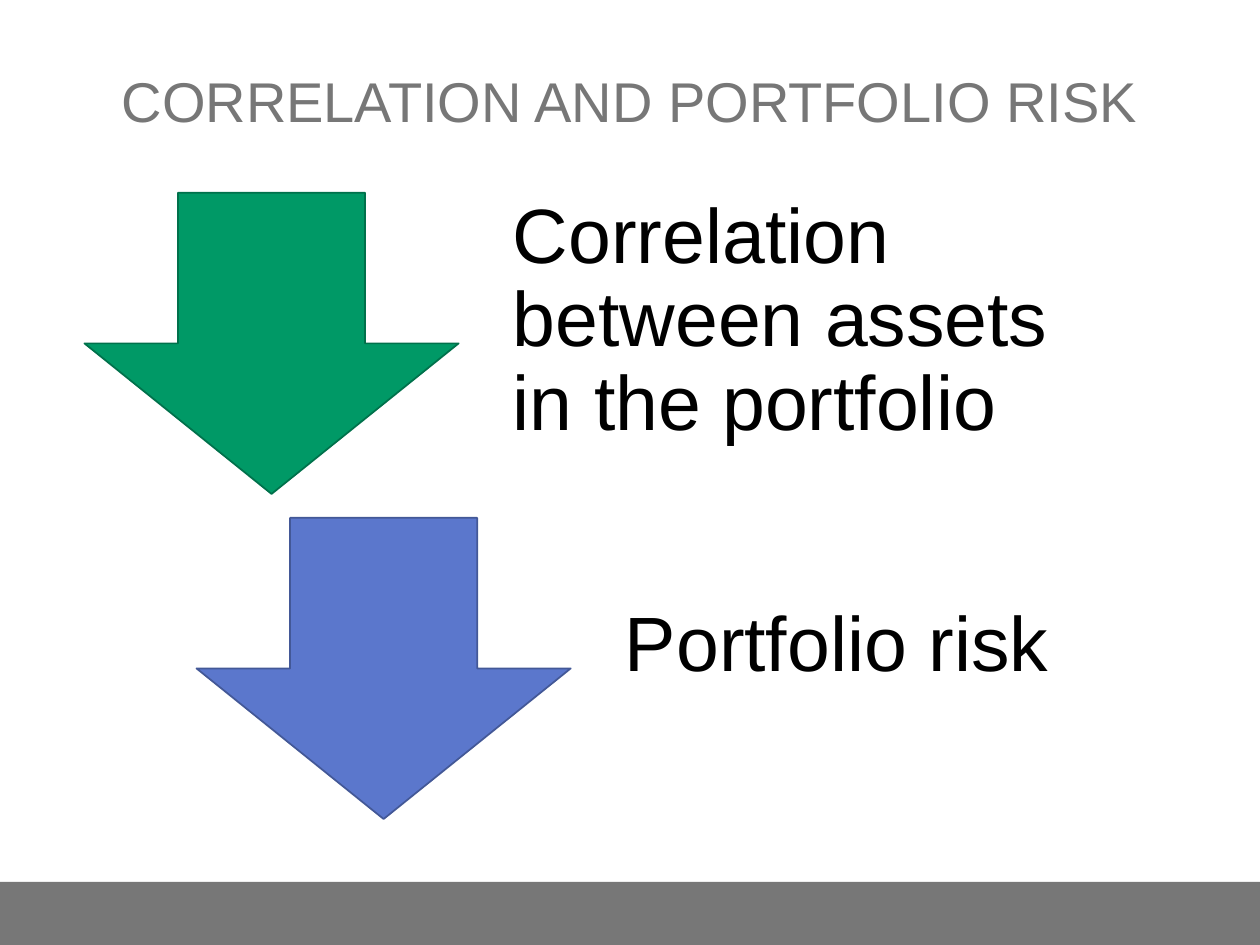
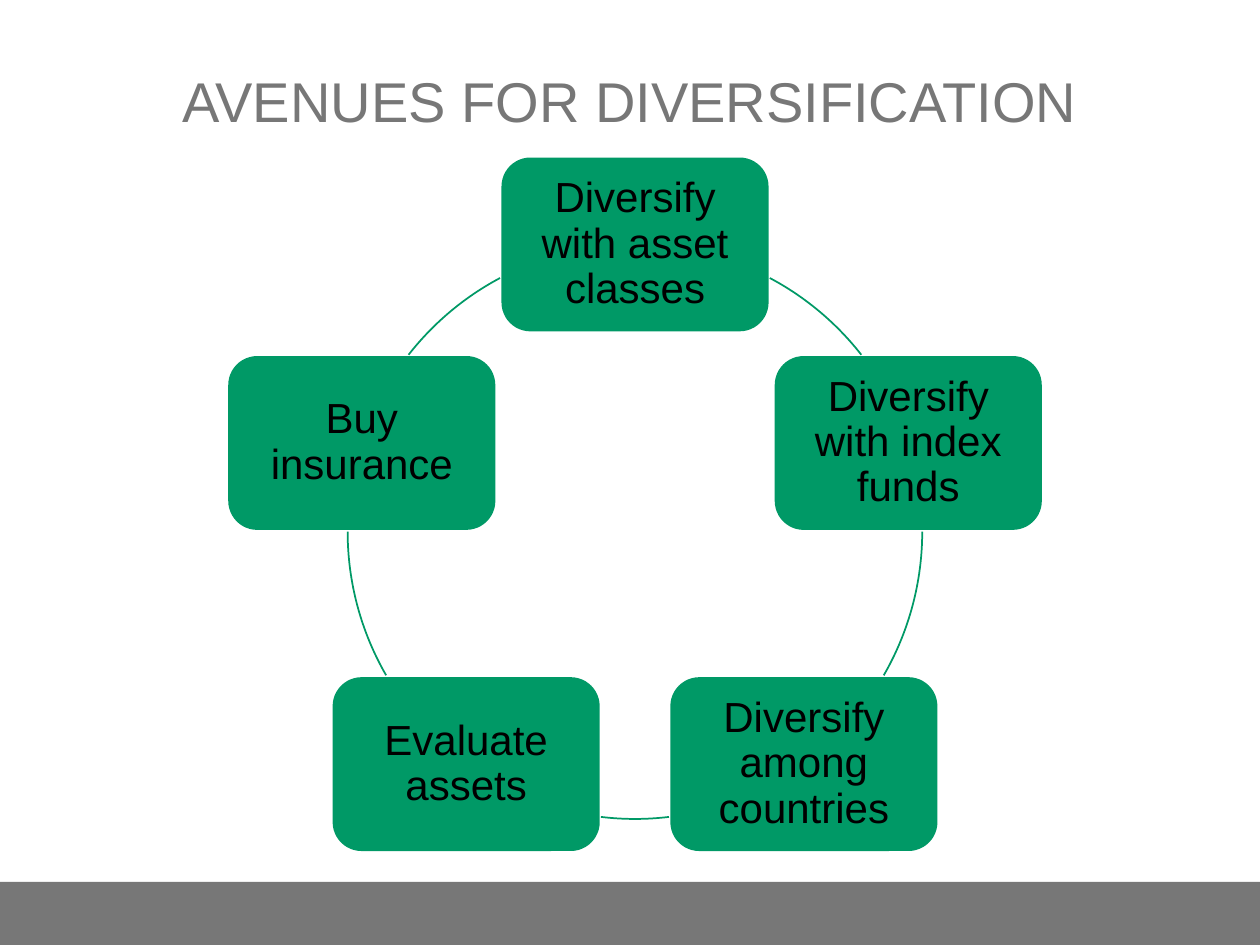
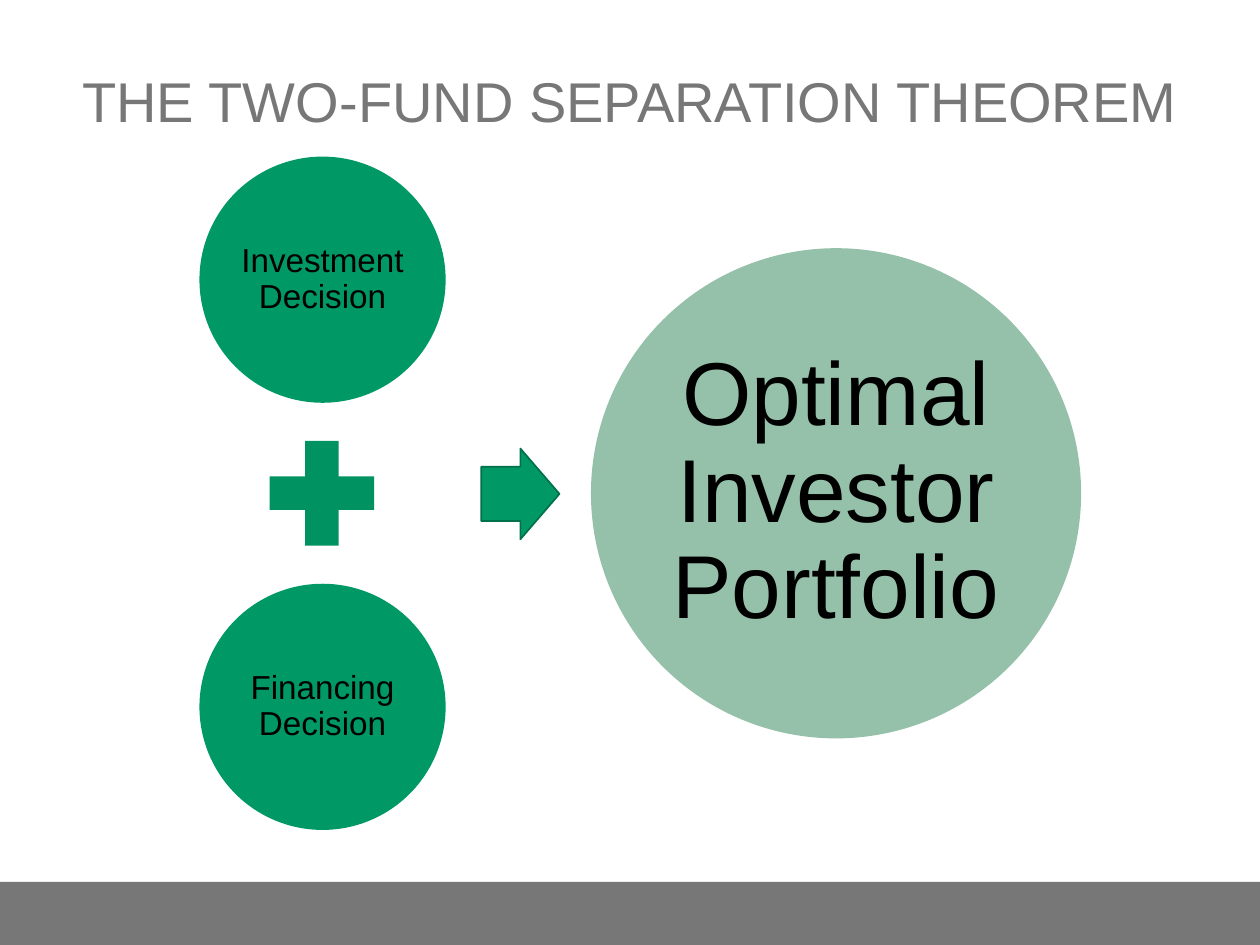
import math
from dataclasses import dataclass
from typing import Optional

import pptx
import pptx.dml.color
import pptx.enum.shapes
import pptx.enum.text
import pptx.presentation
import pptx.shapes.autoshape
import pptx.shapes.base
import pptx.slide
import pptx.util

Inches = pptx.util.Inches
Preset = pptx.enum.shapes.MSO_SHAPE
Align = pptx.enum.text.PP_ALIGN
Anchor = pptx.enum.text.MSO_ANCHOR

FONT = "Arial"
COLOURS = {
    "background": "FFFFFF",
    "grey": "777777",
    "text": "000000",
    "green": "009966",
    "dark green": "00714B",
    "plus green": "009261",
    "pale green": "95C0A9",
    "blue": "5B77CC",
    "dark blue": "435897",
}


@dataclass(frozen=True)
class Box:
    left: float
    top: float
    width: float
    height: float

    def lengths(self) -> tuple:
        return tuple(Inches(value) for value in (self.left, self.top, self.width, self.height))


@dataclass(frozen=True)
class Label:
    text: str
    size: float
    colour: str = "text"
    align: Align = Align.CENTER
    margins: tuple = (0.1, 0.1, 0.1, 0.1)
    line_spacing: float = 0.9


@dataclass(frozen=True)
class Figure:
    preset: Preset
    box: Box
    fill: Optional[str] = None
    line: Optional[str] = None
    label: Optional[Label] = None
    adjustments: tuple = ()
    rotation: float = 0


@dataclass(frozen=True)
class RiskStep:
    preset: Preset
    rotation: float
    fill: str
    line: str
    text: str


BAND = Figure(Preset.RECTANGLE, Box(0, 7, 10, 0.5), "grey")
TITLE_BOX = Box(0.42, 0.17, 9.16, 1.25)

RISK_STEPS = (
    RiskStep(Preset.UP_ARROW, 180, "green", "dark green",
             "Correlation between assets in the portfolio"),
    RiskStep(Preset.DOWN_ARROW, 0, "blue", "dark blue", "Portfolio risk"),
)
AVENUES = (
    "Diversify with asset classes",
    "Diversify with index funds",
    "Diversify among countries",
    "Evaluate assets",
    "Buy insurance",
)
ARC_ANGLES = ((298, 322), (0, 30), (83.2, 96.8), (150, 180), (218, 242))


def colour(name: str) -> pptx.dml.color.RGBColor:
    return pptx.dml.color.RGBColor.from_string(COLOURS[name])


def apply(target: object, values: dict) -> None:
    for name, value in values.items():
        setattr(target, name, value)


def write_label(shape: pptx.shapes.base.BaseShape, label: Label) -> None:
    frame = shape.text_frame
    sides = ("margin_left", "margin_top", "margin_right", "margin_bottom")
    margins = {side: Inches(value) for side, value in zip(sides, label.margins)}
    apply(frame, {"word_wrap": True, "vertical_anchor": Anchor.MIDDLE, **margins})
    paragraph = frame.paragraphs[0]
    apply(paragraph, {"alignment": label.align, "line_spacing": label.line_spacing})
    run = paragraph.add_run()
    run.text = label.text
    apply(run.font, {"name": FONT, "size": pptx.util.Pt(label.size)})
    run.font.color.rgb = colour(label.colour)


def add_text(slide: pptx.slide.Slide, box: Box, label: Label) -> None:
    write_label(slide.shapes.add_textbox(*box.lengths()), label)


def add_figure(slide: pptx.slide.Slide, figure: Figure) -> pptx.shapes.autoshape.Shape:
    shape = slide.shapes.add_shape(figure.preset, *figure.box.lengths())
    shape.shadow.inherit = False
    shape.rotation = figure.rotation
    for index, value in enumerate(figure.adjustments):
        shape.adjustments[index] = value
    if figure.fill:
        shape.fill.solid()
        shape.fill.fore_color.rgb = colour(figure.fill)
    else:
        shape.fill.background()
    if figure.line:
        shape.line.color.rgb = colour(figure.line)
        shape.line.width = pptx.util.Pt(1)
    else:
        shape.line.fill.background()
    if figure.label:
        write_label(shape, figure.label)
    return shape


def add_slide(presentation: pptx.presentation.Presentation, title: str) -> pptx.slide.Slide:
    slide = presentation.slides.add_slide(presentation.slide_layouts[6])
    slide.background.fill.solid()
    slide.background.fill.fore_color.rgb = colour("background")
    add_figure(slide, BAND)
    add_text(slide, TITLE_BOX, Label(title, 32, "grey", line_spacing=1.0))
    return slide


def build_risk_slide(presentation: pptx.presentation.Presentation) -> None:
    slide = add_slide(presentation, "CORRELATION AND PORTFOLIO RISK")
    for index, step in enumerate(RISK_STEPS):
        left, top = 0.67 + 0.89 * index, 1.53 + 2.58 * index
        add_figure(slide, Figure(step.preset, Box(left, top, 2.97, 2.39), step.fill,
                                 step.line, rotation=step.rotation))
        add_text(slide, Box(left + 3.06, top, 5.04, 2.39),
                 Label(step.text, 44, align=Align.LEFT, margins=(0.34, 0, 0.34, 0.34)))


def build_avenues_slide(presentation: pptx.presentation.Presentation) -> None:
    slide = add_slide(presentation, "AVENUES FOR DIVERSIFICATION")
    centre_x, centre_y, radius = 5.04, 4.22, 2.28
    width, height = 2.12, 1.38
    circle = Box(centre_x - radius, centre_y - radius, 2 * radius, 2 * radius)
    for index, (avenue, angles) in enumerate(zip(AVENUES, ARC_ANGLES)):
        angle = math.radians(360 / len(AVENUES) * index - 90)
        node = Box(centre_x + radius * math.cos(angle) - width / 2,
                   centre_y + radius * math.sin(angle) - height / 2, width, height)
        add_figure(slide, Figure(Preset.ROUNDED_RECTANGLE, node, "green",
                                 label=Label(avenue, 24)))
        add_figure(slide, Figure(Preset.ARC, circle, line="green",
                                 adjustments=tuple(0.6 * degrees for degrees in angles)))


def build_theorem_slide(presentation: pptx.presentation.Presentation) -> None:
    slide = add_slide(presentation, "THE TWO-FUND SEPARATION THEOREM")
    for top, decision in ((1.25, "Investment Decision"), (4.64, "Financing Decision")):
        add_figure(slide, Figure(Preset.OVAL, Box(1.59, top, 1.94, 1.94), "green", "green",
                                 Label(decision, 19, margins=(0.03,) * 4)))
    add_figure(slide, Figure(Preset.MATH_PLUS, Box(1.99, 3.35, 1.13, 1.13), "plus green"))
    add_figure(slide, Figure(Preset.RIGHT_ARROW, Box(3.82, 3.56, 0.62, 0.72), "green",
                             "dark green", adjustments=(0.6, 0.5)))
    add_figure(slide, Figure(Preset.OVAL, Box(4.69, 1.97, 3.89, 3.89), "pale green",
                             label=Label("Optimal Investor Portfolio", 51, margins=(0.07,) * 4)))


def main() -> None:
    presentation = pptx.Presentation()
    apply(presentation, {"slide_width": Inches(10), "slide_height": Inches(7.5)})
    build_risk_slide(presentation)
    build_avenues_slide(presentation)
    build_theorem_slide(presentation)
    presentation.save("out.pptx")


if __name__ == "__main__":
    main()
